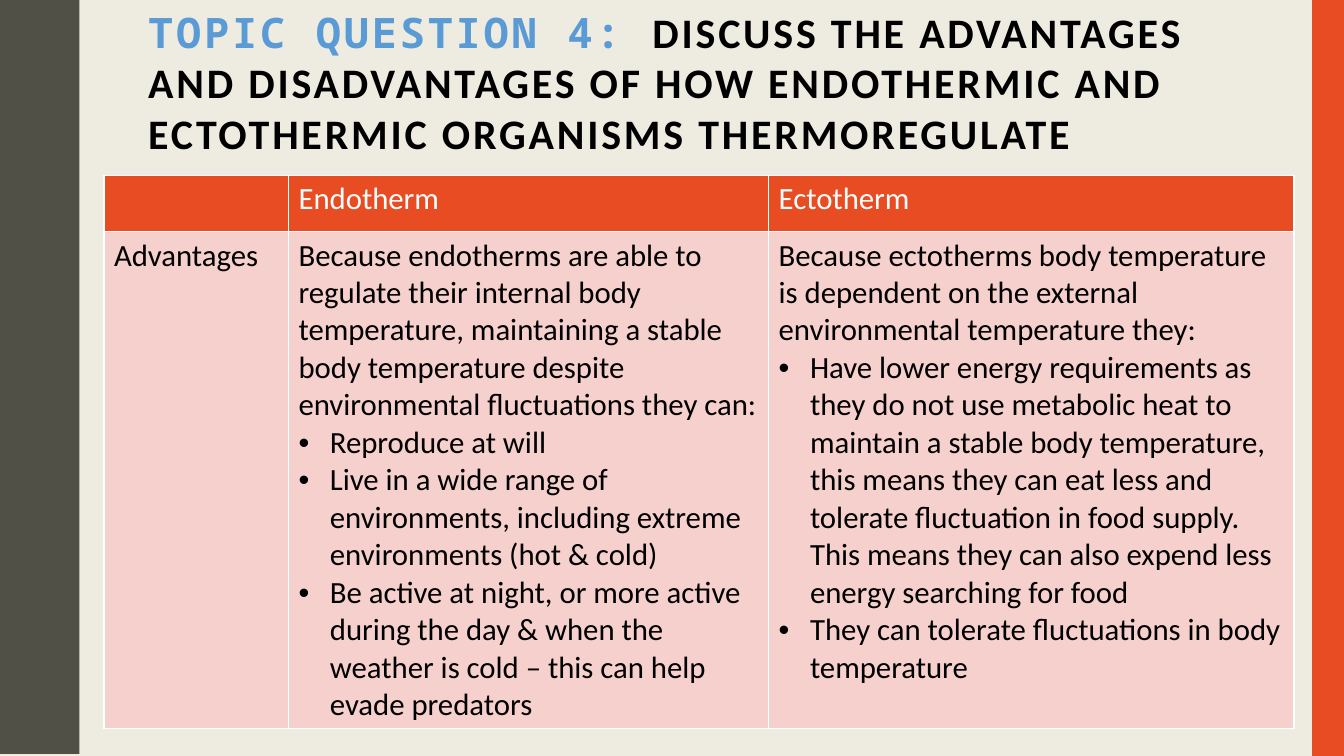
from math import cos, pi
from lxml.etree import SubElement as Sub, Element as Elem
from pptx import Presentation as Deck
from pptx.dml.color import RGBColor as Rgb
from pptx.enum.shapes import MSO_SHAPE as Kind
from pptx.enum.text import MSO_ANCHOR as Anchor, MSO_AUTO_SIZE as Fit, PP_ALIGN as Align
from pptx.oxml.ns import qn
from pptx.util import Cm, Pt

INK = {"back": "EEECE1", "wave": "505046", "head": "E84C22", "cell": "F6D0CD",
       "blue": "5B9BD5", "black": "000000", "white": "FFFFFF"}
WIDE, HIGH = 33.87, 19.05

TITLE = [
    ("TOPIC QUESTION 4: ", "blue", "Noto Sans Mono"),
    ("DISCUSS THE ADVANTAGES AND DISADVANTAGES OF HOW ENDOTHERMIC AND "
     "ECTOTHERMIC ORGANISMS THERMOREGULATE", "black", "Calibri"),
]

# Each cell: a lead line, then its bullets
ROWS = [
    [[""], ["Endotherm"], ["Ectotherm"]],
    [["Advantages"],
     ["Because endotherms are able to regulate their internal body temperature, "
      "maintaining a stable body temperature despite environmental fluctuations they can:",
      "Reproduce at will",
      "Live in a wide range of environments, including extreme environments (hot & cold)",
      "Be active at night, or more active during the day & when the weather is cold "
      "– this can help evade predators"],
     ["Because ectotherms body temperature is dependent on the external "
      "environmental temperature they:",
      "Have lower energy requirements as they do not use metabolic heat to maintain a "
      "stable body temperature, this means they can eat less and tolerate fluctuation in "
      "food supply. This means they can also expend less energy searching for food",
      "They can tolerate fluctuations in body temperature"]],
]


def tint(name):
    return Rgb.from_string(INK[name])


def put(item, form):
    for key, val in form.items():
        setattr(item, key, val)


class Page:
    """Holds the style and the current slide."""

    def __init__(self, deck):
        self.slide = deck.slides.add_slide(deck.slide_layouts[5])
        self.shapes = self.slide.shapes
        self.paint(self.slide.background, "back")

    def paint(self, item, name):
        item.fill.solid()
        item.fill.fore_color.rgb = tint(name)

    def plain(self, shape, name):
        self.paint(shape, name)
        shape.line.fill.background()
        shape.shadow.inherit = False

    def words(self, para, text, name, face="Calibri", size=22, bold=False):
        run = para.add_run()
        run.text = text
        put(run.font, {"name": face, "size": Pt(size), "bold": bold})
        run.font.color.rgb = tint(name)
        return run

    def wave(self, mid, amp, span, step):
        pts = [(mid - amp * cos(2 * pi * i * step / span), i * step)
               for i in range(round(HIGH / step) + 1)]
        form = self.shapes.build_freeform(0, 0, scale=Cm(1))
        form.add_line_segments(pts + [(0, HIGH)], close=True)
        self.plain(form.convert_to_shape(), "wave")

    def bar(self, left, name):
        self.plain(self.shapes.add_shape(
            Kind.RECTANGLE, Cm(left), 0, Cm(WIDE - left), Cm(HIGH)), name)

    def title(self, parts, left, top, wide, high):
        head = self.shapes.title
        put(head, {"left": Cm(left), "top": Cm(top), "width": Cm(wide), "height": Cm(high)})
        put(head.text_frame, {"word_wrap": True, "auto_size": Fit.NONE,
                              "vertical_anchor": Anchor.MIDDLE})
        para = head.text_frame.paragraphs[0]
        para.alignment = Align.LEFT
        for text, name, face in parts:
            run = self.words(para, text, name, face, 30, True)
            run._r.get_or_add_rPr().set("spc", "200")

    def bullet(self, para):
        props = para._p.get_or_add_pPr()
        props.set("marL", str(Cm(0.79)))
        props.set("indent", str(-Cm(0.79)))
        Sub(props, qn("a:buFont"), typeface="Arial")
        Sub(props, qn("a:buChar"), char="•")

    def edge(self, cell):
        props = cell._tc.get_or_add_tcPr()
        for spot, side in enumerate(("lnL", "lnR", "lnT", "lnB")):
            line = Elem(qn("a:" + side), w=str(Pt(1)))
            Sub(Sub(line, qn("a:solidFill")), qn("a:srgbClr"), val=INK["white"])
            props.insert(spot, line)

    def cell(self, cell, lines, back, name):
        self.paint(cell, back)
        self.edge(cell)
        for i, text in enumerate(lines):
            para = cell.text_frame.add_paragraph() if i else cell.text_frame.paragraphs[0]
            if i:
                self.bullet(para)
            if text:
                self.words(para, text, name)

    def table(self, rows, left, top, wides, highs):
        grid = self.shapes.add_table(len(rows), len(wides), Cm(left), Cm(top),
                                     Cm(sum(wides)), Cm(sum(highs))).table
        for col, wide in zip(grid.columns, wides):
            col.width = Cm(wide)
        for r, (row, high) in enumerate(zip(rows, highs)):
            grid.rows[r].height = Cm(high)
            back, name = ("cell", "black") if r else ("head", "white")
            for c, lines in enumerate(row):
                self.cell(grid.cell(r, c), lines, back, name)


def main():
    deck = Deck()
    put(deck, {"slide_width": Cm(WIDE), "slide_height": Cm(HIGH)})
    page = Page(deck)
    # Side decoration
    page.wave(mid=2.22, amp=0.25, span=3.81, step=0.15)
    page.bar(33.07, "head")
    # Heading and comparison
    page.title(TITLE, 3.48, 0, 28.27, 4.14)
    page.table(ROWS, 2.62, 4.42, [4.65, 12.1, 13.24], [1.42, 12.5])
    deck.save("out.pptx")


if __name__ == "__main__":
    main()
